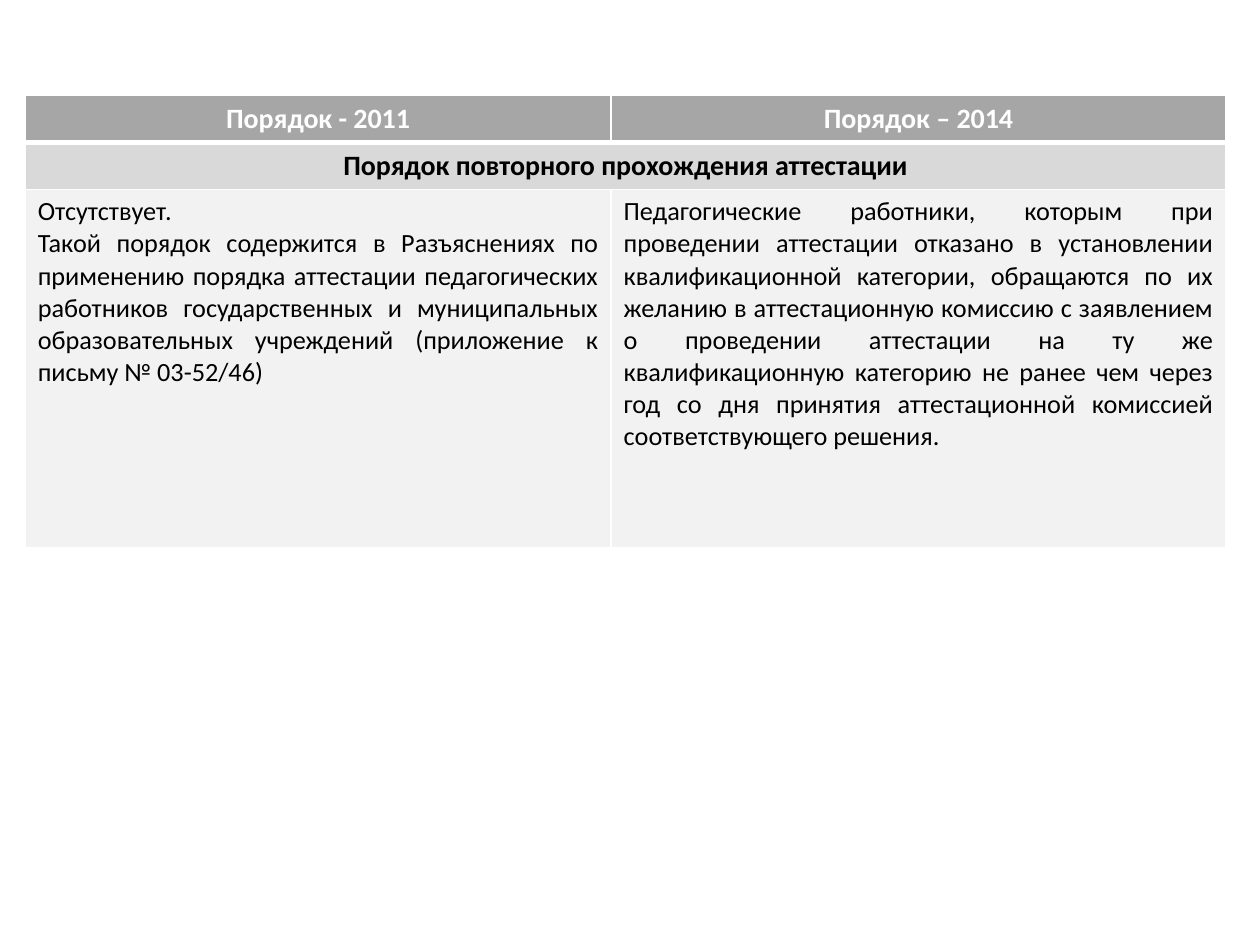
from dataclasses import dataclass
from lxml.etree import SubElement
from pptx import Presentation
from pptx.dml.color import RGBColor
from pptx.enum.text import PP_ALIGN
from pptx.oxml.ns import qn
from pptx.slide import Slide
from pptx.util import Pt

WHITE = RGBColor(0xFF, 0xFF, 0xFF)
BLACK = RGBColor(0x00, 0x00, 0x00)
HEADER_GREY = RGBColor(0xA6, 0xA6, 0xA6)
SECTION_GREY = RGBColor(0xD9, 0xD9, 0xD9)
BODY_GREY = RGBColor(0xF2, 0xF2, 0xF2)

HEADERS = ["Порядок - 2011", "Порядок – 2014"]
SECTION = "Порядок повторного прохождения аттестации"
BODIES = [
    "Отсутствует.\n"
    "Такой порядок содержится в Разъяснениях по применению порядка "
    "аттестации педагогических работников государственных и муниципальных "
    "образовательных учреждений (приложение к письму № 03-52/46)",
    "Педагогические работники, которым при проведении аттестации отказано "
    "в установлении квалификационной категории, обращаются по их желанию "
    "в аттестационную комиссию с заявлением о проведении аттестации на ту же "
    "квалификационную категорию не ранее чем через год со дня принятия "
    "аттестационной комиссией соответствующего решения.",
]


@dataclass
class Page:
    slide: Slide
    font_name: str = "Calibri"
    border_color: RGBColor = WHITE

    def table(self, left, top, widths, heights):
        frame = self.slide.shapes.add_table(
            len(heights), len(widths), Pt(left), Pt(top),
            Pt(sum(widths)), Pt(sum(heights)))
        table = frame.table
        table.horz_banding = False
        for column, width in zip(table.columns, widths):
            column.width = Pt(width)
        for row, height in zip(table.rows, heights):
            row.height = Pt(height)
        return table

    def cell(self, cell, text, fill, color=BLACK, size=16, bold=True,
             align=PP_ALIGN.CENTER, top=1, bottom=1):
        cell.text = text
        for para in cell.text_frame.paragraphs:
            para.alignment = align
            para.font.name = self.font_name
            para.font.size = Pt(size)
            para.font.bold = bold
            para.font.color.rgb = color
        self.borders(cell, {"L": 1, "R": 1, "T": top, "B": bottom})
        cell.fill.solid()
        cell.fill.fore_color.rgb = fill

    def borders(self, cell, widths):
        """Draw solid borders; widths maps a side (L, R, T, B) to points."""
        properties = cell._tc.get_or_add_tcPr()
        for side, width in widths.items():
            line = SubElement(properties, qn(f"a:ln{side}"), w=str(Pt(width)))
            fill = SubElement(line, qn("a:solidFill"))
            SubElement(fill, qn("a:srgbClr"), val=str(self.border_color))


def main():
    deck = Presentation()
    deck.slide_width, deck.slide_height = Pt(720), Pt(540)
    page = Page(deck.slides.add_slide(deck.slide_layouts[6]))

    table = page.table(14.4, 54.7, widths=[334.8, 351.4], heights=[26.6, 26.6, 204.5])
    table.cell(1, 0).merge(table.cell(1, 1))
    page.cell(table.cell(1, 0), SECTION, SECTION_GREY, top=3)
    for column, (header, body) in enumerate(zip(HEADERS, BODIES)):
        page.cell(table.cell(0, column), header, HEADER_GREY, color=WHITE, bottom=3)
        page.cell(table.cell(2, column), body, BODY_GREY, size=15, bold=False,
                  align=PP_ALIGN.JUSTIFY)

    deck.save("out.pptx")


if __name__ == "__main__":
    main()
